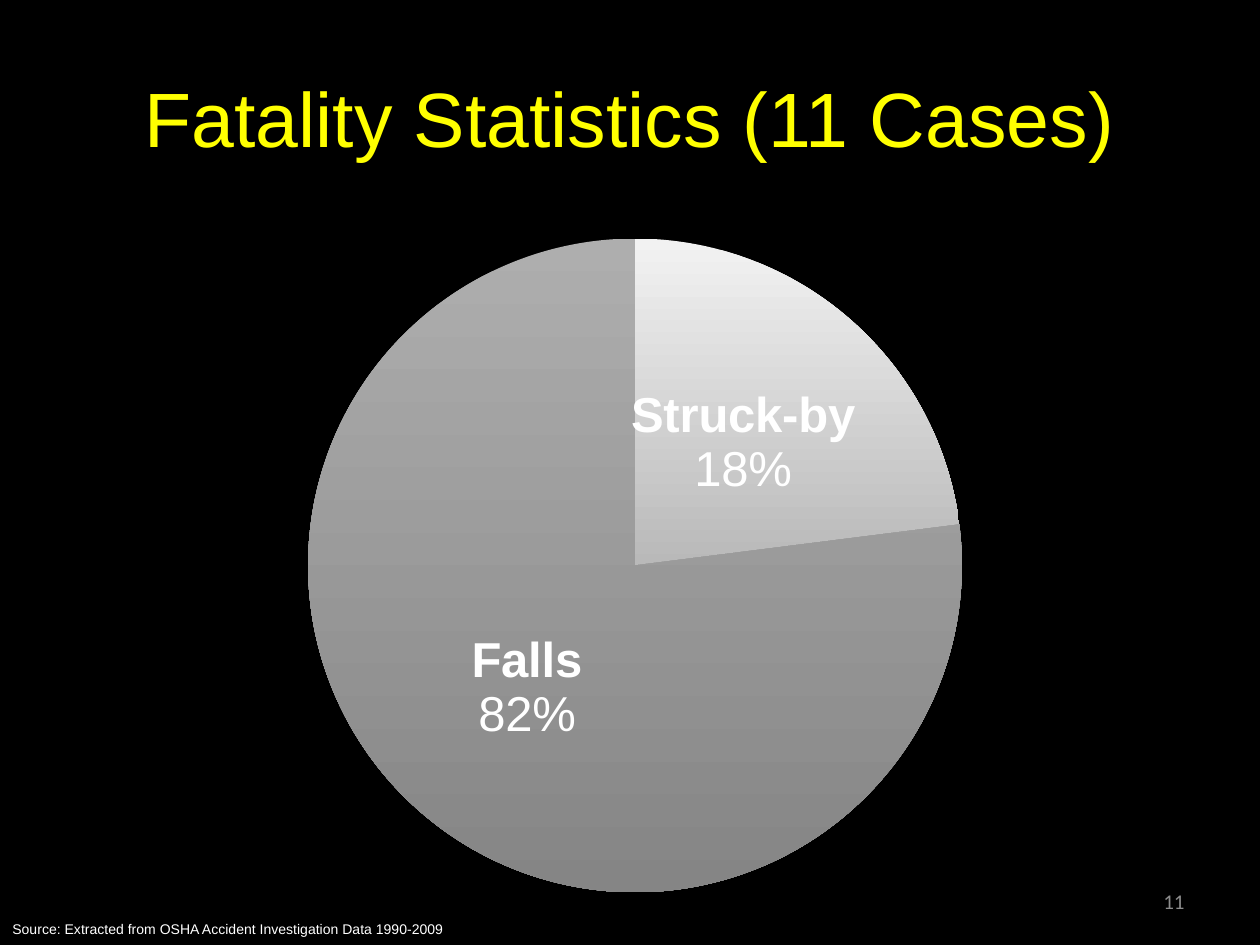
"""Builds the fatality statistics slide with its pie chart."""
from lxml import etree
from pptx import Presentation
from pptx.chart.data import CategoryChartData
from pptx.dml.color import RGBColor
from pptx.enum.chart import XL_CHART_TYPE, XL_LABEL_POSITION
from pptx.enum.text import MSO_ANCHOR, PP_ALIGN
from pptx.oxml.ns import qn
from pptx.util import Pt

PIE = XL_CHART_TYPE.PIE
LABEL_CENTER = XL_LABEL_POSITION.CENTER
MIDDLE, TOP = MSO_ANCHOR.MIDDLE, MSO_ANCHOR.TOP
LEFT, CENTER, RIGHT = PP_ALIGN.LEFT, PP_ALIGN.CENTER, PP_ALIGN.RIGHT

COLORS = {
    "background": "000000",
    "title": "FFFF00",
    "text": "FFFFFF",
    "number": "8C8C8C",
}
SLICES = [
    ("Struck-by", 23, "18%", ("F2F2F2", "B9B9B9")),
    ("Falls", 77, "82%", ("AEAEAE", "858585")),
]
PLOT_LAYOUT = {"x": 0.17, "y": 0.04, "w": 0.66, "h": 0.93}


def rgb(hex_color):
    return RGBColor.from_string(hex_color)


def style_font(font, size, color, name="Arial", bold=False):
    font.size, font.name, font.bold = Pt(size), name, bold
    font.color.rgb = rgb(color)


def place(sp, left, top, width, height):
    sp.left, sp.top, sp.width, sp.height = map(Pt, (left, top, width, height))


def set_text(sp, text, size, color, align, anchor, name="Arial"):
    tf = sp.text_frame
    tf.word_wrap = True
    tf.vertical_anchor = anchor
    tf.text = text
    p = tf.paragraphs[0]
    p.alignment = align
    style_font(p.runs[0].font, size, color, name)


def add_text(slide, box, *text_format):
    sp = slide.shapes.add_textbox(*map(Pt, box))
    set_text(sp, *text_format)


def fill_slice(point, colors):
    fill = point.format.fill
    fill.gradient()
    fill.gradient_angle = 270
    for stop, position, color in zip(fill.gradient_stops, (0, 1), colors):
        stop.position = position
        stop.color.rgb = rgb(color)
    point.format.line.fill.background()


def label_slice(point, name, percent):
    label = point.data_label
    tf = label.text_frame
    tf.text = f"{name}\n{percent}"
    for p, bold in zip(tf.paragraphs, (True, False)):
        style_font(p.runs[0].font, 28, COLORS["text"], bold=bold)
    label.position = LABEL_CENTER


def set_plot_layout(chart):
    area = chart._chartSpace.chart.plotArea
    for old in area.findall(qn("c:layout")):
        area.remove(old)
    layout = etree.Element(qn("c:layout"))
    manual = etree.SubElement(layout, qn("c:manualLayout"))
    values = {"layoutTarget": "inner", "xMode": "edge", "yMode": "edge", **PLOT_LAYOUT}
    for tag, value in values.items():
        etree.SubElement(manual, qn(f"c:{tag}")).set("val", str(value))
    area.insert(0, layout)


def add_pie(slide, box):
    data = CategoryChartData()
    data.categories = [name for name, *_ in SLICES]
    data.add_series("Series 1", [value for _, value, *_ in SLICES])
    chart = slide.shapes.add_chart(PIE, *map(Pt, box), data).chart
    chart.has_title = chart.has_legend = False
    style_font(chart.font, 18, COLORS["text"], "Calibri")
    chart.plots[0].vary_by_categories = True
    points = chart.plots[0].series[0].points
    for i, (name, _, percent, colors) in enumerate(SLICES):
        fill_slice(points[i], colors)
        label_slice(points[i], name, percent)
    set_plot_layout(chart)


def main():
    prs = Presentation()
    prs.slide_width, prs.slide_height = Pt(720), Pt(540)
    slide = prs.slides.add_slide(prs.slide_layouts[5])
    slide.background.fill.solid()
    slide.background.fill.fore_color.rgb = rgb(COLORS["background"])

    title = slide.shapes.title
    place(title, 36, 21.6, 648, 90)
    set_text(title, "Fatality Statistics (11 Cases)", 44, COLORS["title"], CENTER, MIDDLE)
    add_pie(slide, (77.76, 120.24, 570.24, 401.76))
    add_text(slide, (0, 522.72, 360, 17.28),
             "Source: Extracted from OSHA Accident Investigation Data 1990-2009",
             8, COLORS["text"], LEFT, TOP)
    add_text(slide, (516, 500.5, 168, 28.8), "11", 12, COLORS["number"],
             RIGHT, MIDDLE, "Calibri")
    prs.save("out.pptx")


if __name__ == "__main__":
    main()
